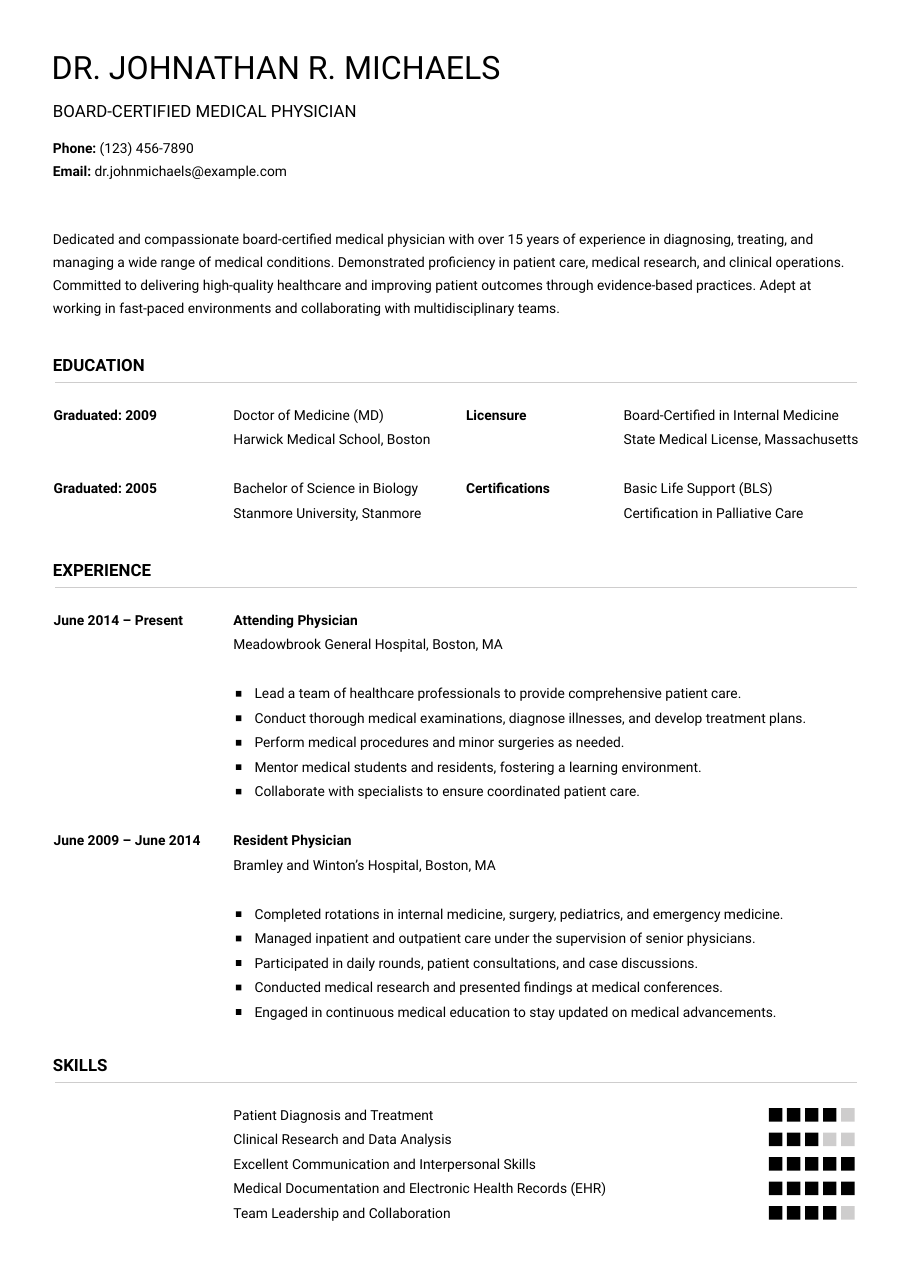
from pptx import Presentation
from pptx import util as u
from pptx.dml import color
from pptx.enum import shapes, text
from pptx.oxml import ns
from lxml import etree

BLACK, GRAY = "000000", "CECDCD"
STEP = 16
LEFT, WIDTH = 34.6, 525.6
BODY = 118

SCHOOL = [
    ("Graduated: 2009", "Doctor of Medicine (MD)", "Harwick Medical School, Boston",
     "Licensure", "Board-Certified in Internal Medicine", "State Medical License, Massachusetts"),
    ("Graduated: 2005", "Bachelor of Science in Biology", "Stanmore University, Stanmore",
     "Certifications", "Basic Life Support (BLS)", "Certification in Palliative Care"),
]
JOBS = [
    ("June 2014 – Present", "Attending Physician", "Meadowbrook General Hospital, Boston, MA", [
        "Lead a team of healthcare professionals to provide comprehensive patient care.",
        "Conduct thorough medical examinations, diagnose illnesses, and develop treatment plans.",
        "Perform medical procedures and minor surgeries as needed.",
        "Mentor medical students and residents, fostering a learning environment.",
        "Collaborate with specialists to ensure coordinated patient care."]),
    ("June 2009 – June 2014", "Resident Physician", "Bramley and Winton’s Hospital, Boston, MA", [
        "Completed rotations in internal medicine, surgery, pediatrics, and emergency medicine.",
        "Managed inpatient and outpatient care under the supervision of senior physicians.",
        "Participated in daily rounds, patient consultations, and case discussions.",
        "Conducted medical research and presented findings at medical conferences.",
        "Engaged in continuous medical education to stay updated on medical advancements."]),
]
SKILLS = [
    ("Patient Diagnosis and Treatment", 4),
    ("Clinical Research and Data Analysis", 3),
    ("Excellent Communication and Interpersonal Skills", 5),
    ("Medical Documentation and Electronic Health Records (EHR)", 5),
    ("Team Leadership and Collaboration", 4),
]
ABOUT = (
    "Dedicated and compassionate board-certified medical physician with over 15 years of "
    "experience in diagnosing, treating, and managing a wide range of medical conditions. "
    "Demonstrated proficiency in patient care, medical research, and clinical operations. "
    "Committed to delivering high-quality healthcare and improving patient outcomes through "
    "evidence-based practices. Adept at working in fast-paced environments and collaborating "
    "with multidisciplinary teams."
)


def paint(form, tone):
    form.solid()
    form.fore_color.rgb = color.RGBColor.from_string(tone)


def write(page, words, x, y, w, h=10.8, size=9, bold=False, lead="", space=None):
    box = page.shapes.add_textbox(u.Pt(x), u.Pt(y), u.Pt(w), u.Pt(h))
    frame = box.text_frame
    frame.margin_left = frame.margin_right = frame.margin_top = frame.margin_bottom = 0
    frame.word_wrap = True
    frame.auto_size = text.MSO_AUTO_SIZE.SHAPE_TO_FIT_TEXT
    para = frame.paragraphs[0]
    if space:
        para.line_spacing = space
    for part, heavy in ((lead, True), (words, bold)):
        if part:
            run = para.add_run()
            run.text = part
            run.font.name = "Roboto"
            run.font.size = u.Pt(size)
            run.font.bold = heavy
            paint(run.font.fill, BLACK)


def square(page, x, y, side, tone=BLACK):
    box = page.shapes.add_shape(shapes.MSO_SHAPE.RECTANGLE,
                                u.Pt(x), u.Pt(y), u.Pt(side), u.Pt(side))
    box.shadow.inherit = False
    paint(box.fill, tone)
    box.line.fill.background()


def title(page, name, x, y, w):
    write(page, name, x, y, 206.6, h=13.7, size=11, bold=True)
    rule = page.shapes.add_connector(shapes.MSO_CONNECTOR.STRAIGHT, u.Pt(x + 1.4),
                                     u.Pt(y + 18.4), u.Pt(x + w), u.Pt(y + 18.4))
    rule.line.width = u.Pt(0.75)
    paint(rule.line.fill, GRAY)
    etree.SubElement(rule.element.spPr, ns.qn("a:effectLst"))
    return y + 33.9


def header(page, x, y, w):
    write(page, "DR. JOHNATHAN R. MICHAELS", x - 0.8, y, 409, h=25.2, size=21)
    write(page, "BOARD-CERTIFIED MEDICAL PHYSICIAN", x, y + 34.5, 409, h=13.7, size=11)
    write(page, "(123) 456-7890", x, y + 60.4, 206.6, lead="Phone: ")
    write(page, "dr.johnmichaels@example.com", x, y + 75.6, 206.6, lead="Email: ")
    write(page, ABOUT, x, y + 115.2, w, h=56.9, space=1.4)


def education(page, x, y, w):
    top = title(page, "EDUCATION", x, y, w)
    for i, (date, degree, place, kind, main, more) in enumerate(SCHOOL):
        row = top + i * 3 * STEP
        write(page, date, x + 0.5, row, 104, bold=True)
        write(page, degree, x + BODY, row, 140.4)
        write(page, place, x + BODY, row + STEP, 140.4)
        write(page, kind, x + 270, row, 93, bold=True)
        write(page, main, x + 373, row, 159)
        write(page, more, x + 373, row + STEP, 159)


def experience(page, x, y, w):
    top = title(page, "EXPERIENCE", x, y, w)
    for i, (date, role, place, tasks) in enumerate(JOBS):
        row = top + i * 9 * STEP
        write(page, date, x + 0.5, row, 104, bold=True)
        write(page, role, x + BODY, row, 140.4, bold=True)
        write(page, place, x + BODY, row + STEP, 252)
        for j, task in enumerate(tasks):
            line = row + (j + 3) * STEP
            write(page, task, x + 131.8, line, 392.4)
            square(page, x + 119.5, line + 3.8, 3.7)


def skills(page, x, y, w):
    top = title(page, "SKILLS", x, y, w)
    for i, (skill, score) in enumerate(SKILLS):
        row = top + i * STEP
        write(page, skill, x + BODY, row, 324.7)
        for j in range(5):
            square(page, x + 468 + j * 11.8, row + 1.2, 8.8, BLACK if j < score else GRAY)


def main():
    deck = Presentation()
    deck.slide_width, deck.slide_height = u.Pt(595.44), u.Pt(841.68)
    page = deck.slides.add_slide(deck.slide_layouts[6])
    header(page, LEFT, 31, WIDTH)
    education(page, LEFT, 231.8, WIDTH)
    experience(page, LEFT, 365.8, WIDTH)
    skills(page, LEFT, 689.1, WIDTH)
    deck.save("out.pptx")


if __name__ == "__main__":
    main()
